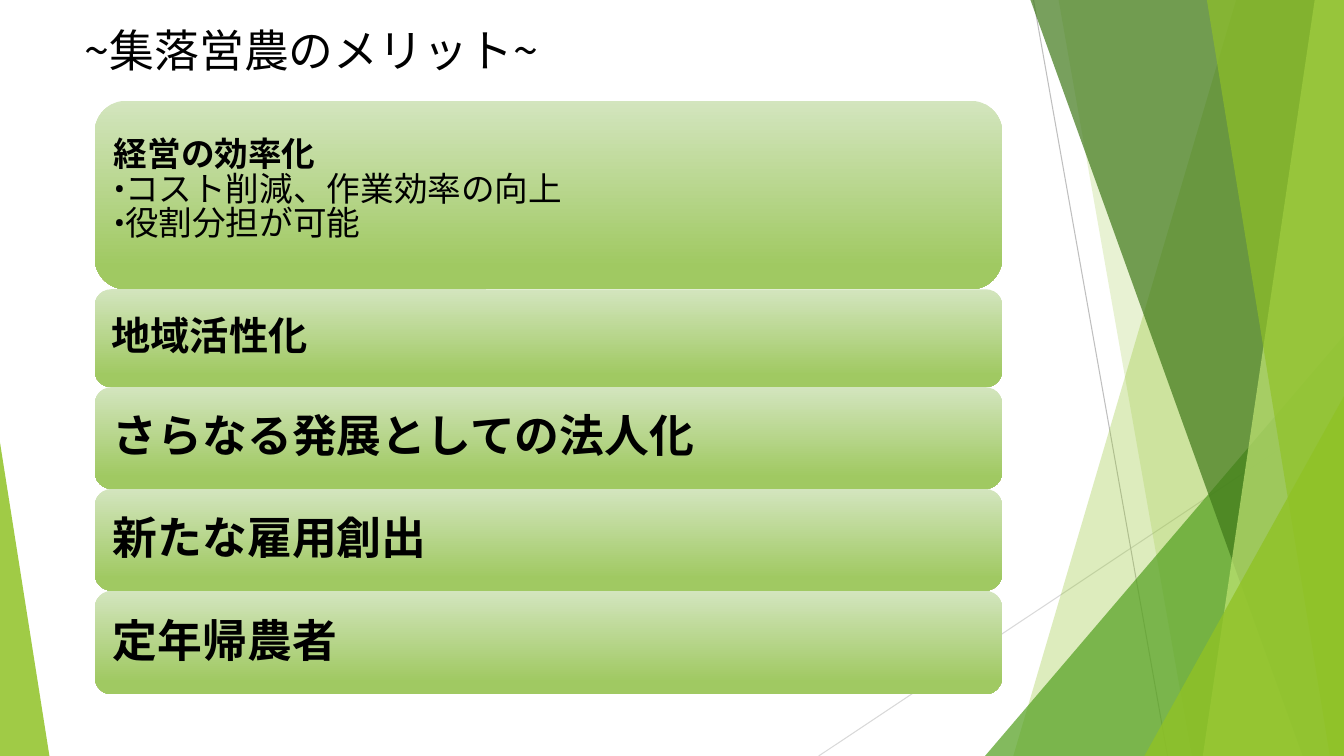
from dataclasses import dataclass

from lxml import etree
from pptx import Presentation
from pptx import util as u
from pptx.dml.color import RGBColor
from pptx.enum import lang, shapes, text
from pptx.oxml import ns

PX = 9144  # EMU per px, 100 px to the inch
WIDTH, HEIGHT = 1333, 750
COLORS = {
    "text": "000000",
    "panel_top": "D3E5BE",
    "panel_bottom": "A0C962",
    "light_line": "D9D9D9",
    "grey_line": "BFBFBF",
    "green": "90C226",
    "mid_green": "54A021",
    "dark_green": "3F7819",
    "lime": "C0E474",
}


@dataclass
class Ray:
    start: tuple[int, int]
    end: tuple[int, int]
    color: str


@dataclass
class Facet:
    points: list[tuple[int, int]]
    color: str
    opacity: int


@dataclass
class Panel:
    lines: list[str]
    height: int
    size: int
    inset: int
    line_spacing: float = 0.9
    space_after: int = 6


RAYS = [
    Ray((812, HEIGHT), (WIDTH, 403), "light_line"),
    Ray((1025, 0), (1158, HEIGHT), "grey_line"),
]
RIGHT_EDGE = [(WIDTH, HEIGHT), (WIDTH, 0)]
FACETS = [
    Facet([(1226, 0), (1005, HEIGHT), *RIGHT_EDGE], "green", 30),
    Facet([(1050, 0), (1182, HEIGHT), *RIGHT_EDGE], "green", 20),
    Facet([(977, HEIGHT), (WIDTH, 333), (WIDTH, HEIGHT)], "mid_green", 72),
    Facet([(1022, 0), (1292, HEIGHT), *RIGHT_EDGE], "dark_green", 70),
    Facet([(1304, 0), (1193, HEIGHT), *RIGHT_EDGE], "lime", 70),
    Facet([(1197, 0), (1319, HEIGHT), *RIGHT_EDGE], "green", 65),
    Facet([(1135, HEIGHT), (WIDTH, 393), (WIDTH, HEIGHT)], "green", 80),
    Facet([(0, 439), (49, HEIGHT), (0, HEIGHT)], "green", 85),
]
PANEL_LEFT, PANEL_TOP, PANEL_WIDTH = 94, 100, 900
PANELS = [
    Panel(["経営の効率化", "•コスト削減、作業効率の向上", "•役割分担が可能"], 187, 24, 10, 0.5, 10),
    Panel(["地域活性化"], 97, 28, 12),
    Panel(["さらなる発展としての法人化"], 101, 32, 13),
    Panel(["新たな雇用創出"], 101, 32, 13),
    Panel(["定年帰農者"], 103, 32, 13),
]


def px(value: int) -> int:
    return value * PX


def rgb(name: str) -> RGBColor:
    return RGBColor.from_string(COLORS[name])


def format_paragraph(paragraph, font_name: str, size: int, bold: bool, line_spacing: float) -> None:
    paragraph.alignment = text.PP_ALIGN.LEFT
    paragraph.line_spacing = line_spacing
    for run in paragraph.runs:
        font = run.font
        font.name, font.size, font.bold = font_name, u.Pt(size), bold
        font.color.rgb = rgb("text")
        font.language_id = lang.MSO_LANGUAGE_ID.JAPANESE
        east_asian = etree.Element(ns.qn("a:ea"), typeface=font_name)
        run._r.rPr.find(ns.qn("a:latin")).addnext(east_asian)


def draw_ray(slide, ray: Ray) -> None:
    connector = slide.shapes.add_connector(
        shapes.MSO_CONNECTOR.STRAIGHT, *map(px, ray.start + ray.end)
    )
    connector.line.color.rgb = rgb(ray.color)
    connector.line.width = u.Pt(0.75)
    etree.SubElement(connector._element.spPr, ns.qn("a:effectLst"))


def draw_facet(slide, facet: Facet) -> None:
    builder = slide.shapes.build_freeform(*facet.points[0], scale=PX)
    builder.add_line_segments(facet.points[1:], close=True)
    shape = builder.convert_to_shape()
    shape.shadow.inherit = False
    shape.line.fill.background()
    shape.fill.solid()
    shape.fill.fore_color.rgb = rgb(facet.color)
    color = shape._element.spPr.find(ns.qn("a:solidFill"))[0]
    etree.SubElement(color, ns.qn("a:alpha"), val=str(facet.opacity * 1000))


def draw_panel(slide, panel: Panel, top: int) -> None:
    shape = slide.shapes.add_shape(
        shapes.MSO_SHAPE.ROUNDED_RECTANGLE,
        px(PANEL_LEFT), px(top), px(PANEL_WIDTH), px(panel.height),
    )
    shape.shadow.inherit = False
    shape.line.fill.background()
    shape.fill.gradient()
    shape.fill.gradient_angle = 270
    stops = shape.fill.gradient_stops
    for stop, position, color in zip(stops, (0, 0.88), ("panel_top", "panel_bottom")):
        stop.position = position
        stop.color.rgb = rgb(color)

    frame = shape.text_frame
    frame.word_wrap = True
    frame.vertical_anchor = text.MSO_ANCHOR.MIDDLE
    frame.margin_left = frame.margin_right = px(panel.inset)
    frame.margin_top = frame.margin_bottom = px(panel.inset)
    frame.text = "\n".join(panel.lines)
    for index, paragraph in enumerate(frame.paragraphs):
        format_paragraph(paragraph, "Roboto", panel.size, index == 0, panel.line_spacing)
        paragraph.space_after = u.Pt(panel.space_after)


def set_title(slide) -> None:
    title = slide.shapes.title
    title.left, title.top, title.width, title.height = map(px, (74, 18, 940, 71))
    frame = title.text_frame
    frame.text = "~集落営農のメリット~"
    frame.word_wrap = True
    frame.auto_size = text.MSO_AUTO_SIZE.NONE
    frame.vertical_anchor = text.MSO_ANCHOR.TOP
    format_paragraph(frame.paragraphs[0], "Noto Sans CJK JP", 32, False, 1.0)


def main() -> None:
    presentation = Presentation()
    presentation.slide_width, presentation.slide_height = px(WIDTH), px(HEIGHT)
    slide = presentation.slides.add_slide(presentation.slide_layouts.get_by_name("Title Only"))

    # Background decoration
    for ray in RAYS:
        draw_ray(slide, ray)
    for facet in FACETS:
        draw_facet(slide, facet)

    # Title and stacked panels
    set_title(slide)
    top = PANEL_TOP
    for panel in PANELS:
        draw_panel(slide, panel, top)
        top += panel.height

    presentation.save("out.pptx")


if __name__ == "__main__":
    main()
